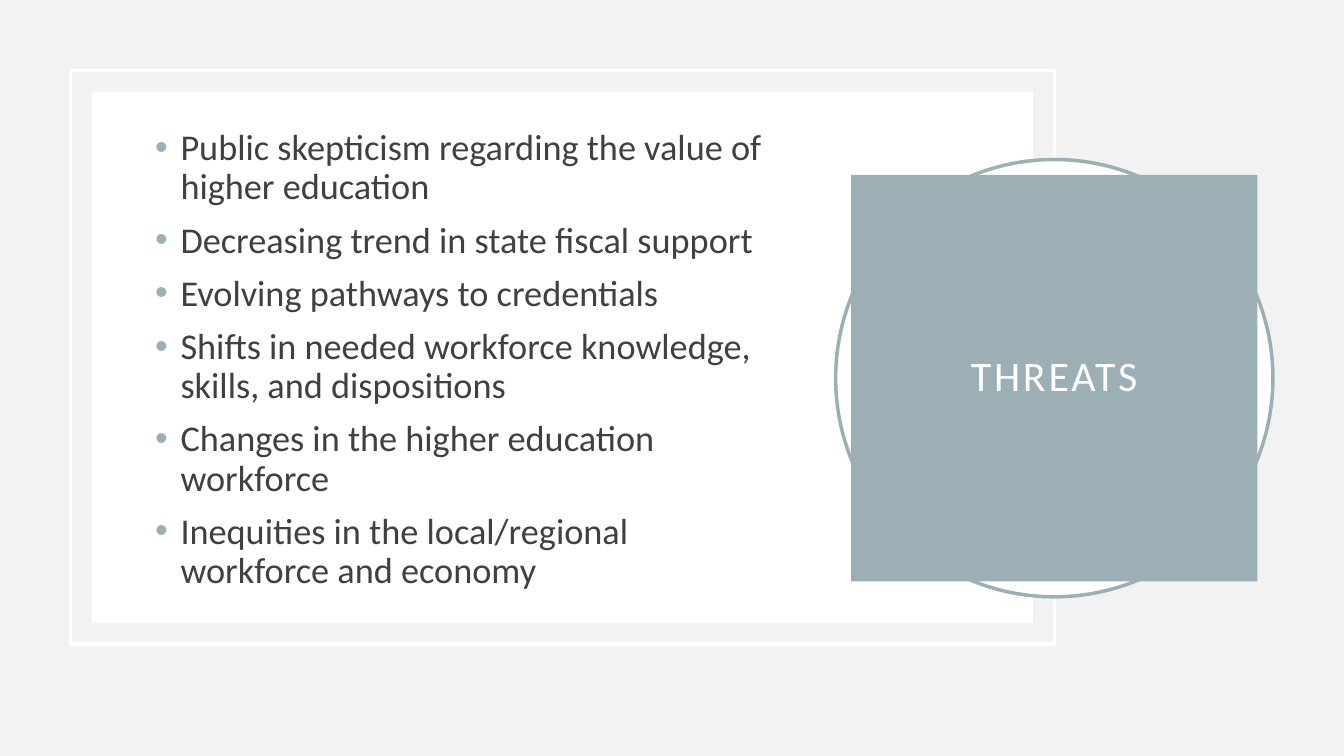
from lxml import etree
from pptx import Presentation
from pptx.dml.color import RGBColor
from pptx.enum.shapes import MSO_SHAPE
from pptx.enum.text import MSO_ANCHOR, PP_ALIGN
from pptx.oxml.ns import qn
from pptx.util import Cm, Pt

BACKGROUND = RGBColor(0xF2, 0xF2, 0xF2)
WHITE = RGBColor(0xFF, 0xFF, 0xFF)
ACCENT = RGBColor(0x9B, 0xAF, 0xB5)
INK = RGBColor(0x40, 0x40, 0x40)
FONT = "Calibri"

THREATS = [
    "Public skepticism regarding the value of higher education",
    "Decreasing trend in state fiscal support",
    "Evolving pathways to credentials",
    "Shifts in needed workforce knowledge, skills, and dispositions",
    "Changes in the higher education workforce",
    "Inequities in the local/regional workforce and economy",
]


def add_box(slide, kind, box, fill=None, line=None):
    """Add a preset shape in a box given in centimetres."""
    sp = slide.shapes.add_shape(kind, *map(Cm, box))
    sp.shadow.inherit = False
    if fill is None:
        sp.fill.background()
    else:
        sp.fill.solid()
        sp.fill.fore_color.rgb = fill
    if line is None:
        sp.line.fill.background()
    else:
        sp.line.color.rgb = line
        sp.line.width = Pt(2.5)
    return sp


def inset(box, margin):
    """Return the box shrunk by the margin on every side."""
    x, y, w, h = box
    return x + margin, y + margin, w - 2 * margin, h - 2 * margin


def write_text(p, text, size, color, align=PP_ALIGN.LEFT, before=0, spacing=0):
    """Write one formatted run into a paragraph."""
    p.alignment = align
    p.line_spacing = 0.9
    p.space_before = Pt(before)
    r = p.add_run()
    r.text = text
    r.font.name = FONT
    r.font.size = Pt(size)
    r.font.color.rgb = color
    if spacing:
        r.font._element.set("spc", str(spacing * 100))


def add_bullet(p, color, indent):
    """Give a paragraph a coloured bullet with a hanging indent."""
    pPr = p._p.get_or_add_pPr()
    pPr.set("marL", str(indent))
    pPr.set("indent", str(-indent))
    buClr = etree.SubElement(pPr, qn("a:buClr"))
    etree.SubElement(buClr, qn("a:srgbClr"), val=str(color))
    etree.SubElement(pPr, qn("a:buFont"), typeface="Arial")
    etree.SubElement(pPr, qn("a:buChar"), char="•")


def add_list_panel(slide, box, items):
    """Draw the framed white panel with its bulleted list."""
    x, y, w, h = box
    add_box(slide, MSO_SHAPE.RECTANGLE, box, line=WHITE)
    add_box(slide, MSO_SHAPE.RECTANGLE, inset(box, 0.53), fill=WHITE)
    text_box = x + 1.88, y + 1.04, 15.88, h - 1.93
    tf = slide.shapes.add_textbox(*map(Cm, text_box)).text_frame
    tf.word_wrap = True
    tf.vertical_anchor = MSO_ANCHOR.MIDDLE
    for i, item in enumerate(items):
        p = tf.add_paragraph() if i else tf.paragraphs[0]
        write_text(p, item, 25.9, INK, before=10)
        add_bullet(p, ACCENT, Cm(0.64))


def add_title_badge(slide, box, title):
    """Draw the ringed title block."""
    add_box(slide, MSO_SHAPE.OVAL, box, fill=WHITE, line=ACCENT)
    sp = add_box(slide, MSO_SHAPE.RECTANGLE, inset(box, 0.39), fill=ACCENT)
    tf = sp.text_frame
    tf.word_wrap = True
    tf.vertical_anchor = MSO_ANCHOR.MIDDLE
    tf.margin_left = tf.margin_right = tf.margin_top = tf.margin_bottom = Cm(0.51)
    write_text(tf.paragraphs[0], title, 30, WHITE, align=PP_ALIGN.CENTER, spacing=2)


def main():
    """Build and save the slide."""
    prs = Presentation()
    prs.slide_width, prs.slide_height = Cm(33.87), Cm(19.05)
    s = prs.slides.add_slide(prs.slide_layouts[6])
    s.background.fill.solid()
    s.background.fill.fore_color.rgb = BACKGROUND
    add_list_panel(s, (1.78, 1.78, 24.79, 14.45), THREATS)
    add_title_badge(s, (21.06, 4.02, 11.02, 11.02), "THREATS")
    prs.save("out.pptx")


if __name__ == "__main__":
    main()
